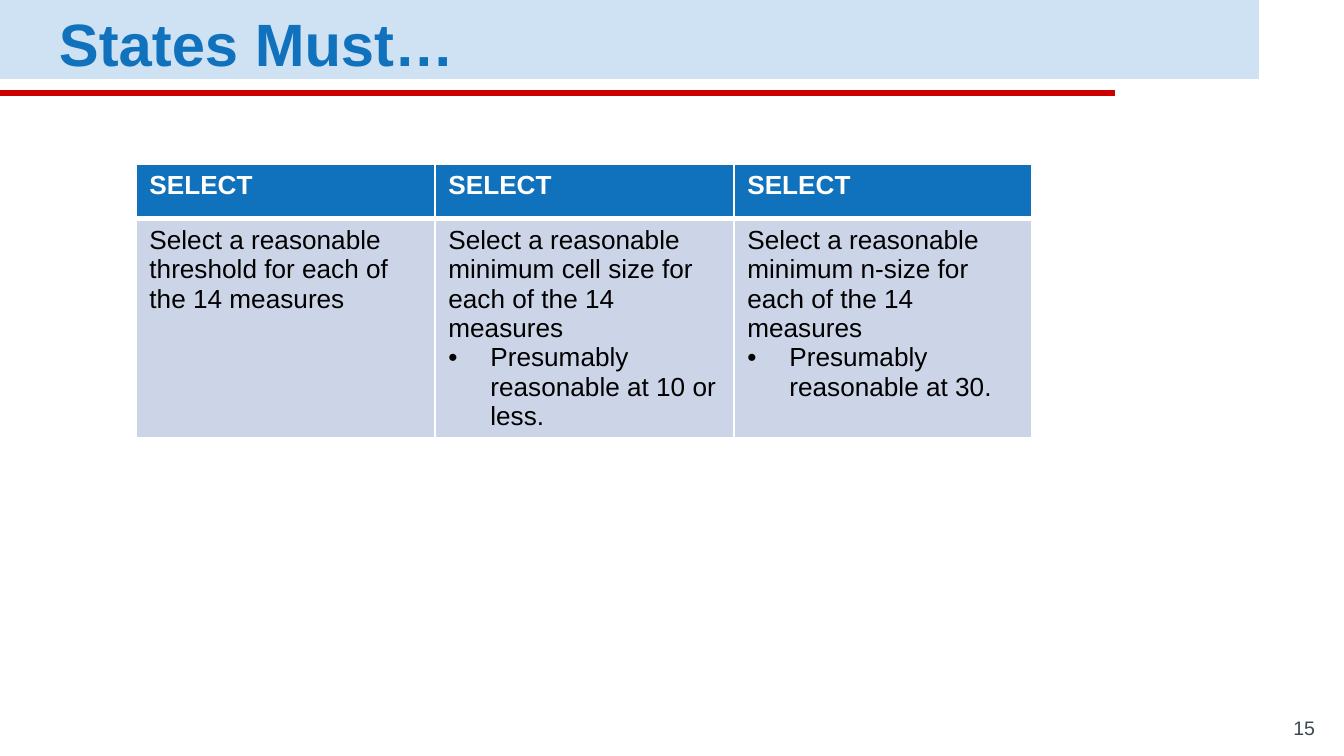
from dataclasses import dataclass

from lxml import etree
from pptx import Presentation
from pptx.dml.color import RGBColor
from pptx.enum.shapes import MSO_SHAPE
from pptx.enum.text import MSO_ANCHOR, MSO_AUTO_SIZE, PP_ALIGN
from pptx.oxml.ns import qn
from pptx.util import Emu, Pt

RECTANGLE = MSO_SHAPE.RECTANGLE
MIDDLE, BOTTOM = MSO_ANCHOR.MIDDLE, MSO_ANCHOR.BOTTOM
NO_AUTOFIT = MSO_AUTO_SIZE.NONE
LEFT, RIGHT = PP_ALIGN.LEFT, PP_ALIGN.RIGHT

EMU_PER_PX = 914400 / 134.4
FONT = "Arial"
TITLE_ONLY = 5
COLORS = {
    "band": "CFE2F3",
    "rule": "CC0000",
    "blue": "1071BD",
    "body": "CCD5E8",
    "number": "3A4950",
    "white": "FFFFFF",
    "black": "000000",
}


@dataclass(frozen=True)
class Box:
    left: int
    top: int
    width: int
    height: int


@dataclass(frozen=True)
class Bar:
    box: Box
    color: str


@dataclass(frozen=True)
class TextStyle:
    size: float
    color: str
    bold: bool = False


@dataclass(frozen=True)
class Column:
    width: int
    heading: str
    statement: str
    bullet: str = ""


BARS = [
    Bar(Box(0, 0, 1259, 79), "band"),
    Bar(Box(0, 90, 1115, 6), "rule"),
]
COLUMNS = [
    Column(299, "SELECT", "Select a reasonable threshold for each of the 14 measures"),
    Column(299, "SELECT", "Select a reasonable minimum cell size for each of the 14 measures",
           "Presumably reasonable at 10 or less."),
    Column(298, "SELECT", "Select a reasonable minimum n-size for each of the 14 measures",
           "Presumably reasonable at 30."),
]
ROW_HEIGHTS = [55, 217]
TITLE_BOX = Box(46, 4, 1213, 66)
NUMBER_BOX = Box(1247, 718, 81, 35)
TITLE_STYLE = TextStyle(32, "blue", True)
NUMBER_STYLE = TextStyle(10.5, "number")
HEADING_STYLE = TextStyle(14, "white", True)
BODY_STYLE = TextStyle(14, "black")
INSET = 13
BULLET_INDENT = 42
HEADING_BORDERS = {"lnL": 1, "lnR": 1, "lnT": 1, "lnB": 3}
BODY_BORDERS = {"lnL": 1, "lnR": 1, "lnT": 3, "lnB": 1}


def px(value: int) -> Emu:
    return Emu(round(value * EMU_PER_PX))


def rgb(name: str) -> RGBColor:
    return RGBColor.from_string(COLORS[name])


def place(shape, box: Box) -> None:
    shape.left, shape.top = px(box.left), px(box.top)
    shape.width, shape.height = px(box.width), px(box.height)


def add_run(paragraph, text: str, style: TextStyle) -> None:
    run = paragraph.add_run()
    run.text = text
    run.font.name = FONT
    run.font.size = Pt(style.size)
    run.font.bold = style.bold
    run.font.color.rgb = rgb(style.color)


def format_frame(frame, anchor) -> None:
    frame.word_wrap = True
    frame.auto_size = NO_AUTOFIT
    frame.vertical_anchor = anchor
    frame.margin_left = frame.margin_right = px(INSET)
    frame.margin_top = frame.margin_bottom = px(INSET)


def add_bar(slide, bar: Bar) -> None:
    shape = slide.shapes.add_shape(RECTANGLE, 0, 0, 0, 0)
    place(shape, bar.box)
    shape.shadow.inherit = False
    shape.fill.solid()
    shape.fill.fore_color.rgb = rgb(bar.color)
    shape.line.fill.background()


def add_title(slide, text: str) -> None:
    title = slide.shapes.title
    slide.shapes.element.append(title.element)
    place(title, TITLE_BOX)
    format_frame(title.text_frame, MIDDLE)
    paragraph = title.text_frame.paragraphs[0]
    paragraph.alignment = LEFT
    paragraph.line_spacing = 1.15
    paragraph.space_after = Pt(16)
    add_run(paragraph, text, TITLE_STYLE)


def add_slide_number(slide, text: str) -> None:
    shape = slide.shapes.add_textbox(0, 0, 0, 0)
    place(shape, NUMBER_BOX)
    format_frame(shape.text_frame, BOTTOM)
    paragraph = shape.text_frame.paragraphs[0]
    paragraph.alignment = RIGHT
    add_run(paragraph, text, NUMBER_STYLE)


def add_bullet(paragraph) -> None:
    properties = paragraph._p.get_or_add_pPr()
    properties.set("marL", str(px(BULLET_INDENT)))
    properties.set("indent", str(-px(BULLET_INDENT)))
    etree.SubElement(properties, qn("a:buFont")).set("typeface", FONT)
    etree.SubElement(properties, qn("a:buChar")).set("char", "•")


def format_cell(cell, color: str, borders: dict[str, int]) -> None:
    properties = cell._tc.get_or_add_tcPr()
    for side, width in borders.items():
        line = etree.SubElement(properties, qn(f"a:{side}"))
        line.set("w", str(Pt(width)))
        fill = etree.SubElement(line, qn("a:solidFill"))
        etree.SubElement(fill, qn("a:srgbClr")).set("val", COLORS["white"])
    cell.fill.solid()
    cell.fill.fore_color.rgb = rgb(color)


def add_requirements(slide, left: int, top: int) -> None:
    width = sum(column.width for column in COLUMNS)
    table = slide.shapes.add_table(len(ROW_HEIGHTS), len(COLUMNS), px(left), px(top),
                                   px(width), px(sum(ROW_HEIGHTS))).table
    for row, height in zip(table.rows, ROW_HEIGHTS):
        row.height = px(height)
    for index, column in enumerate(COLUMNS):
        table.columns[index].width = px(column.width)
        heading, body = table.cell(0, index), table.cell(1, index)
        format_cell(heading, "blue", HEADING_BORDERS)
        format_cell(body, "body", BODY_BORDERS)
        add_run(heading.text_frame.paragraphs[0], column.heading, HEADING_STYLE)
        add_run(body.text_frame.paragraphs[0], column.statement, BODY_STYLE)
        if column.bullet:
            paragraph = body.text_frame.add_paragraph()
            add_bullet(paragraph)
            add_run(paragraph, column.bullet, BODY_STYLE)


def main() -> None:
    presentation = Presentation()
    presentation.slide_width, presentation.slide_height = px(1344), px(756)
    slide = presentation.slides.add_slide(presentation.slide_layouts[TITLE_ONLY])
    for bar in BARS:
        add_bar(slide, bar)
    add_title(slide, "States Must…")
    add_slide_number(slide, "15")
    add_requirements(slide, 136, 164)
    presentation.save("out.pptx")


if __name__ == "__main__":
    main()
